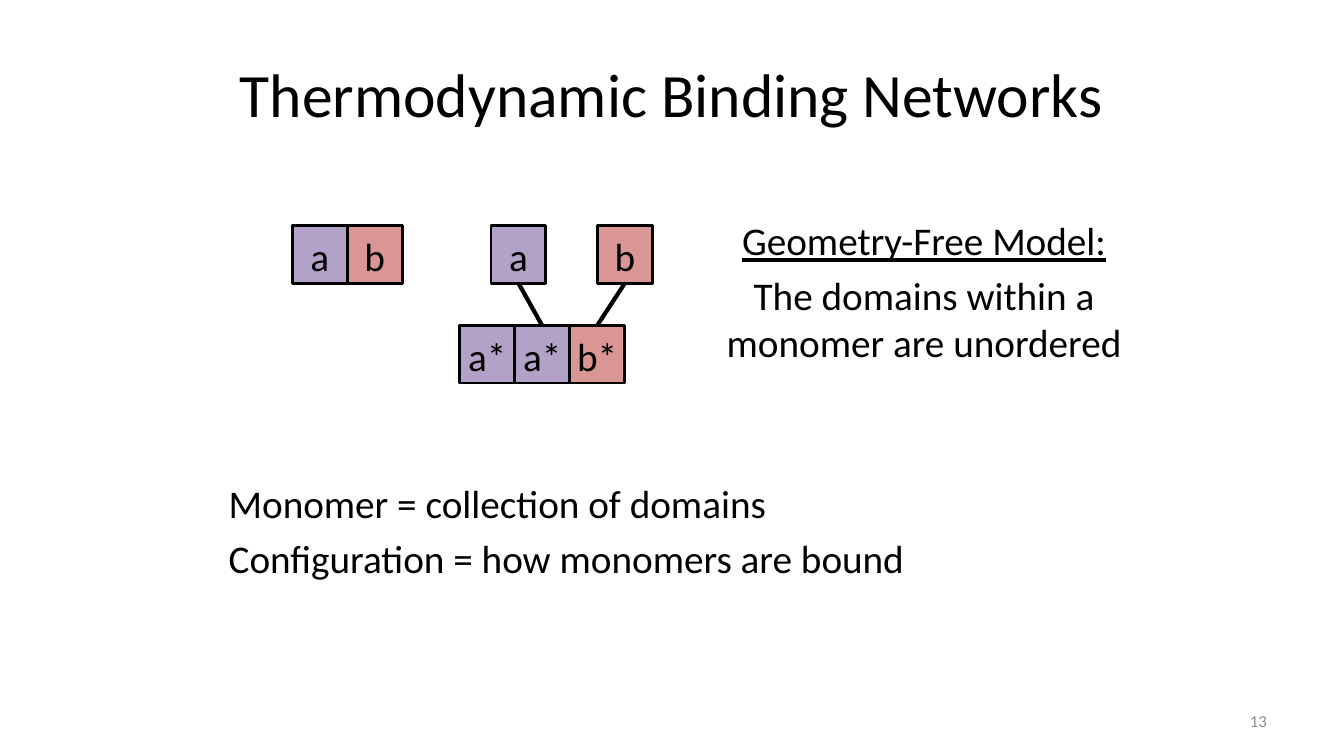
import dataclasses

import pptx
import pptx.dml.color
import pptx.enum.shapes
import pptx.enum.text
import pptx.util
from lxml import etree

Inches = pptx.util.Inches
Pt = pptx.util.Pt
ALIGN = pptx.enum.text.PP_ALIGN
ANCHOR = pptx.enum.text.MSO_ANCHOR
BOTTOM, TOP = 2, 0


@dataclasses.dataclass(frozen=True)
class Theme:
    font: str = "Calibri"
    ink: str = "000000"
    muted: str = "8C8C8C"
    domain_a: str = "B3A2C7"
    domain_b: str = "D99694"
    title_size: float = 44
    body_size: float = 28
    number_size: float = 12
    border: float = 2
    bond: float = 3


@dataclasses.dataclass(frozen=True)
class Box:
    left: float
    top: float
    width: float
    height: float

    def emu(self):
        return [Inches(value) for value in dataclasses.astuple(self)]


THEME = Theme()
SLIDE_WIDTH, SLIDE_HEIGHT = 13.33, 7.5
DOMAIN_WIDTH, DOMAIN_HEIGHT = 0.545, 0.57


def color(code):
    return pptx.dml.color.RGBColor.from_string(code)


def style_paragraph(paragraph, size, ink, align):
    paragraph.alignment = align
    paragraph.font.name = THEME.font
    paragraph.font.size = Pt(size)
    paragraph.font.color.rgb = color(ink)


def add_text(slide, box, lines, size, ink=THEME.ink, align=ALIGN.LEFT,
             anchor=ANCHOR.TOP, space_before=0):
    """Add a wrapping text box with one paragraph per line and return its paragraphs."""
    frame = slide.shapes.add_textbox(*box.emu()).text_frame
    frame.word_wrap = True
    frame.vertical_anchor = anchor
    frame.text = "\n".join(lines)
    for paragraph in frame.paragraphs:
        style_paragraph(paragraph, size, ink, align)
        paragraph.space_before = Pt(space_before)
    return frame.paragraphs


def add_title(slide, box):
    add_text(slide, box, ["Thermodynamic Binding Networks"], THEME.title_size,
             align=ALIGN.CENTER, anchor=ANCHOR.MIDDLE)


def add_definitions(slide, box):
    add_text(slide, box,
             ["Monomer = collection of domains",
              "Configuration = how monomers are bound"],
             THEME.body_size, space_before=0.2 * THEME.body_size)


def add_model_note(slide, box):
    heading, _ = add_text(
        slide, box,
        ["Geometry-Free Model:", "The domains within a monomer are unordered"],
        THEME.body_size, align=ALIGN.CENTER, space_before=0.2 * THEME.body_size)
    heading.font.underline = True


def add_slide_number(slide, box):
    add_text(slide, box, ["13"], THEME.number_size, THEME.muted,
             ALIGN.RIGHT, ANCHOR.MIDDLE)


def add_monomer(slide, left, top, domains):
    """Add a row of touching domain squares and return them."""
    squares = []
    for column, domain in enumerate(domains):
        box = Box(left + column * DOMAIN_WIDTH, top, DOMAIN_WIDTH, DOMAIN_HEIGHT)
        square = slide.shapes.add_shape(
            pptx.enum.shapes.MSO_SHAPE.RECTANGLE, *box.emu())
        square.shadow.inherit = False
        square.fill.solid()
        square.fill.fore_color.rgb = color(
            THEME.domain_a if domain.startswith("a") else THEME.domain_b)
        square.line.color.rgb = color(THEME.ink)
        square.line.width = Pt(THEME.border)
        frame = square.text_frame
        frame.word_wrap = False
        frame.vertical_anchor = ANCHOR.MIDDLE
        frame.margin_left = frame.margin_right = 0
        frame.margin_top = Inches(0.08)
        frame.margin_bottom = Inches(0.05)
        frame.text = domain
        style_paragraph(frame.paragraphs[0], THEME.body_size, THEME.ink, ALIGN.CENTER)
        squares.append(square)
    return squares


def add_bond(slide, upper, lower):
    bond = slide.shapes.add_connector(
        pptx.enum.shapes.MSO_CONNECTOR.STRAIGHT, 0, 0, 0, 0)
    bond.begin_connect(upper, BOTTOM)
    bond.end_connect(lower, TOP)
    bond.line.color.rgb = color(THEME.ink)
    bond.line.width = Pt(THEME.bond)
    etree.SubElement(bond._element.spPr, pptx.oxml.ns.qn("a:effectLst"))


def add_binding_network(slide, box):
    """Place free monomers along the top of the box and the bound one at its bottom."""
    add_monomer(slide, box.left, box.top, ["a", "b"])
    [free_a] = add_monomer(slide, box.left + 1.97, box.top, ["a"])
    [free_b] = add_monomer(slide, box.left + box.width - DOMAIN_WIDTH, box.top, ["b"])
    _, bound_a, bound_b = add_monomer(
        slide, box.left + 1.66, box.top + box.height - DOMAIN_HEIGHT,
        ["a*", "a*", "b*"])
    add_bond(slide, free_a, bound_a)
    add_bond(slide, free_b, bound_b)


def main():
    presentation = pptx.Presentation()
    presentation.slide_width = Inches(SLIDE_WIDTH)
    presentation.slide_height = Inches(SLIDE_HEIGHT)
    slide = presentation.slides.add_slide(presentation.slide_layouts[6])
    margin = SLIDE_WIDTH / 20
    add_title(slide, Box(margin, 0.3, SLIDE_WIDTH - 2 * margin, SLIDE_HEIGHT / 6))
    add_binding_network(slide, Box(2.9, 2.24, 3.57, 1.56))
    add_model_note(slide, Box(6.9, 2.1, 4.53, 2.08))
    add_definitions(slide, Box(2.17, 4.71, 9, 1.28))
    add_slide_number(slide, Box(SLIDE_WIDTH - margin - 3.11, 6.95, 3.11, 0.4))
    presentation.save("out.pptx")


if __name__ == "__main__":
    main()
